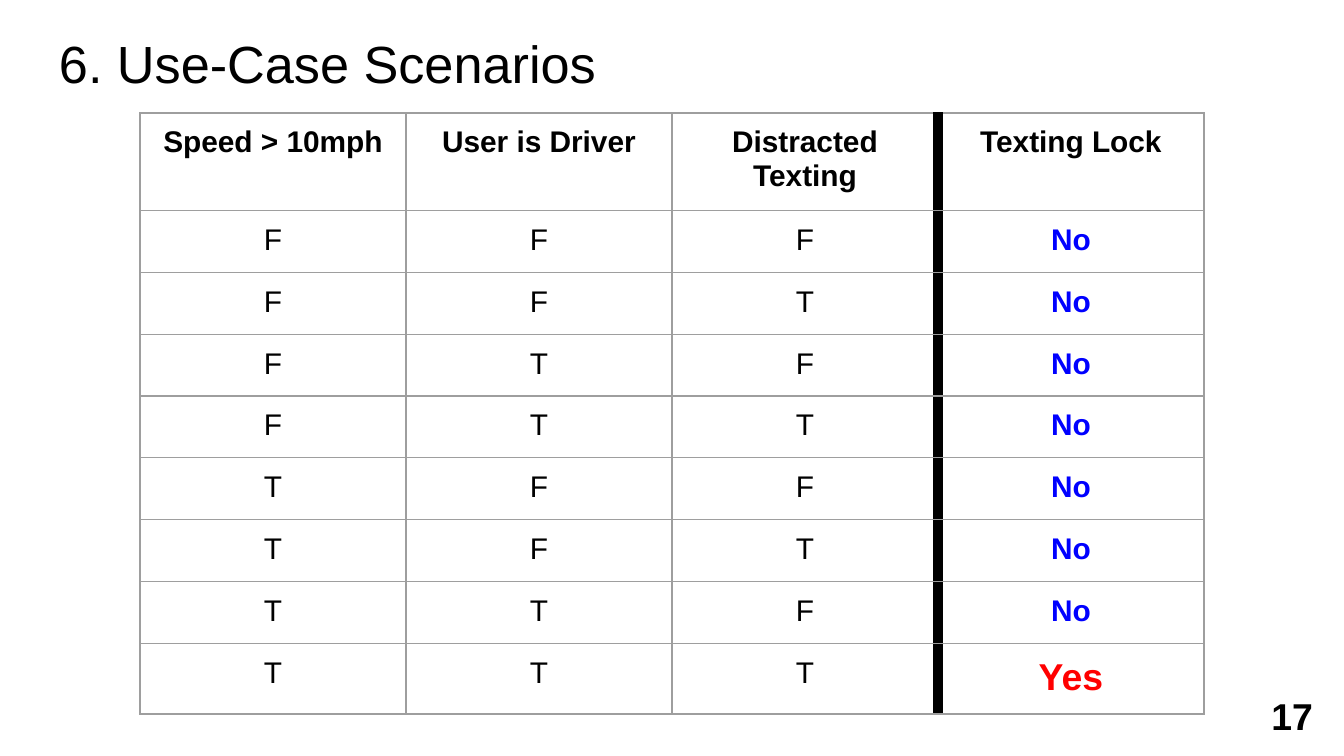
from itertools import product

from lxml import etree
from pptx import Presentation, util as u
from pptx.dml.color import RGBColor
from pptx.enum import text
from pptx.oxml.ns import qn

SLIDE_W, SLIDE_H = 1344, 756
INSET = 13
BLACK, GREY, BLUE, RED = "000000", "9E9E9E", "0000FF", "FF0000"
HEADINGS = ("Speed > 10mph", "User is Driver", "Distracted Texting", "Texting Lock")


def px(length):
    return u.Emu(round(length * u.Inches(10) / SLIDE_W))


def paint(color_format, color):
    color_format.rgb = RGBColor.from_string(color)


def add_run(paragraph, words, size, color=BLACK, bold=False):
    run = paragraph.add_run()
    run.text = words
    run.font.name = "Arial"
    run.font.size = u.Pt(size)
    run.font.bold = bold
    paint(run.font.color, color)


def set_insets(holder):
    for side in ("left", "top", "right", "bottom"):
        setattr(holder, f"margin_{side}", px(INSET))


def add_line_of_text(slide, box, words, size, bold=False,
                     align=text.PP_ALIGN.LEFT, anchor=text.MSO_ANCHOR.TOP):
    frame = slide.shapes.add_textbox(*map(px, box)).text_frame
    frame.word_wrap = True
    frame.vertical_anchor = anchor
    set_insets(frame)
    frame.paragraphs[0].alignment = align
    add_run(frame.paragraphs[0], words, size, bold=bold)


def add_border(cell, side, color, points):
    line = etree.SubElement(cell._tc.get_or_add_tcPr(), qn(f"a:ln{side}"),
                            w=str(u.Pt(points)))
    fill = etree.SubElement(line, qn("a:solidFill"))
    etree.SubElement(fill, qn("a:srgbClr"), val=color)


def fill_cell(cell, words, heavy_side, size=16, color=BLACK, bold=False):
    """Write one centred cell; heavy_side is the side with the thick rule, if any."""
    for side in "LRTB":
        add_border(cell, side, *((BLACK, 6) if side == heavy_side else (GREY, 0.75)))
    cell.fill.background()
    set_insets(cell)
    paragraph = cell.text_frame.paragraphs[0]
    paragraph.alignment = text.PP_ALIGN.CENTER
    add_run(paragraph, words, size, color, bold)


def add_truth_table(slide, box):
    """Texting is locked only when all three conditions hold."""
    conditions = list(product("FT", repeat=3))
    table = slide.shapes.add_table(len(conditions) + 1, len(HEADINGS),
                                   *map(px, box)).table
    table.first_row = table.horz_banding = False
    heavy_sides = (None, None, "R", "L")

    for c, (heading, heavy) in enumerate(zip(HEADINGS, heavy_sides)):
        fill_cell(table.cell(0, c), heading, heavy, bold=True)

    for r, values in enumerate(conditions, start=1):
        for c, value in enumerate(values):
            fill_cell(table.cell(r, c), value, heavy_sides[c])
        locked = all(value == "T" for value in values)
        answer, size, color = ("Yes", 20, RED) if locked else ("No", 16, BLUE)
        fill_cell(table.cell(r, 3), answer, heavy_sides[3], size, color, bold=True)


def main():
    deck = Presentation()
    deck.slide_width, deck.slide_height = px(SLIDE_W), px(SLIDE_H)
    slide = deck.slides.add_slide(deck.slide_layouts[6])
    add_line_of_text(slide, (46, 18, 1252, 84), "6. Use-Case Scenarios", 28)
    add_truth_table(slide, (140, 113, 4 * 266, 9 * 56))
    add_line_of_text(slide, (1246, 687, 80, 58), "17", 20, bold=True,
                     align=text.PP_ALIGN.RIGHT, anchor=text.MSO_ANCHOR.MIDDLE)
    deck.save("out.pptx")


if __name__ == "__main__":
    main()
